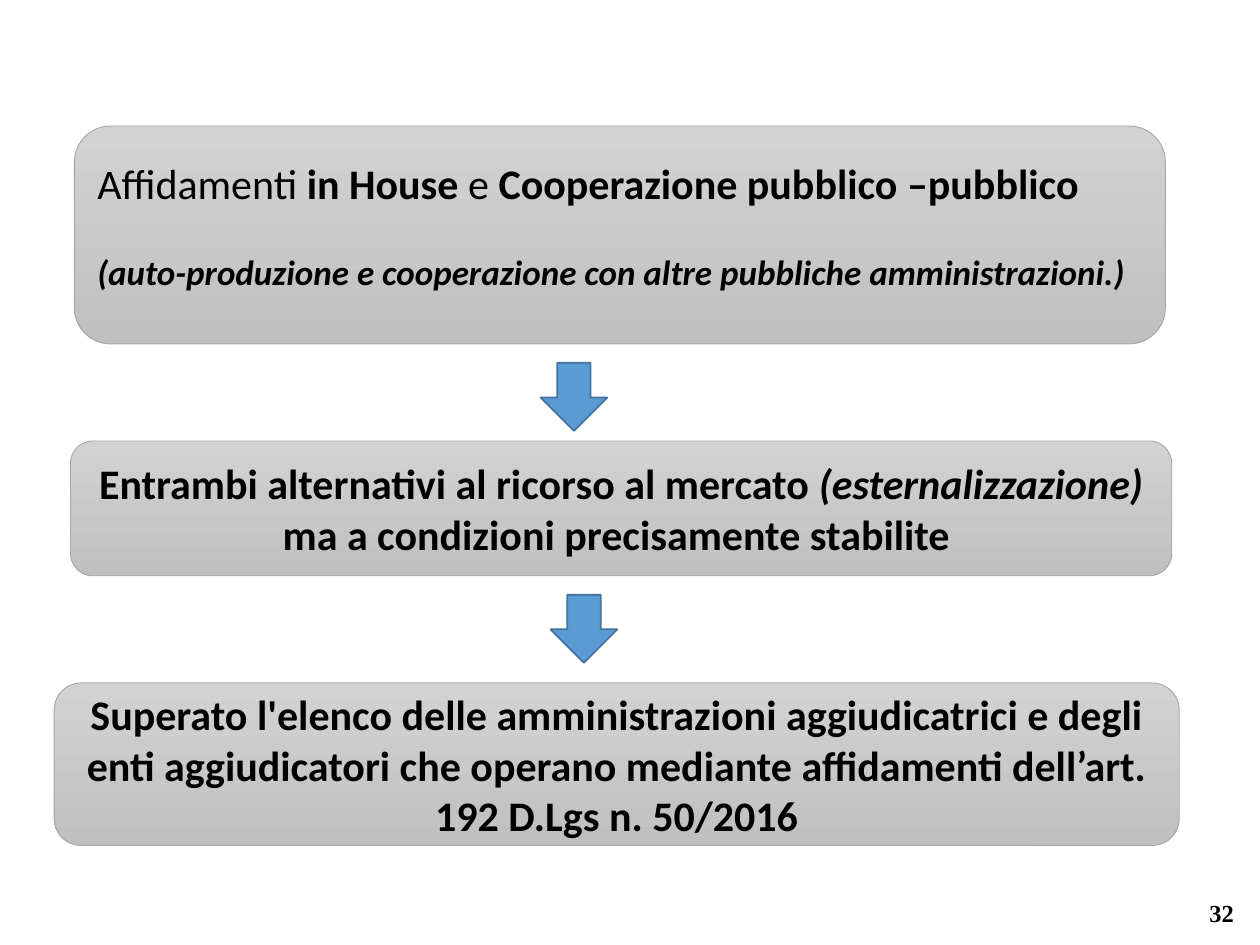
from pptx import Presentation
from pptx.dml.color import RGBColor
from pptx.enum.shapes import MSO_SHAPE
from pptx.enum.text import MSO_ANCHOR, PP_ALIGN
from pptx.util import Inches, Pt

ROUNDED, DOWN_ARROW = MSO_SHAPE.ROUNDED_RECTANGLE, MSO_SHAPE.DOWN_ARROW
MIDDLE = MSO_ANCHOR.MIDDLE
CENTER, JUSTIFY, RIGHT = PP_ALIGN.CENTER, PP_ALIGN.JUSTIFY, PP_ALIGN.RIGHT

BLACK = RGBColor(0x00, 0x00, 0x00)
GREY_TOP = RGBColor(0xD2, 0xD2, 0xD2)
GREY_BOTTOM = RGBColor(0xC0, 0xC0, 0xC0)
GREY_LINE = RGBColor(0xA5, 0xA5, 0xA5)
BLUE = RGBColor(0x5B, 0x9B, 0xD5)
BLUE_LINE = RGBColor(0x43, 0x73, 0x9E)

PLAIN = {"bold": False}
BOLD = {"bold": True}
BOLD_ITALIC = {"bold": True, "italic": True}

# Each paragraph: size, space before, runs of (text, style)
STEPS = [
    {"at": (0.59, 1, 8.66, 1.73), "align": JUSTIFY, "bottom": 0.21, "paragraphs": [
        (24, 0, [("Affidamenti ", PLAIN), ("in House ", BOLD), ("e ", PLAIN),
                 ("Cooperazione pubblico –pubblico ", BOLD)]),
        (20, 24, [("(auto-produzione e cooperazione con altre pubbliche "
                   "amministrazioni.)", BOLD_ITALIC)]),
    ]},
    {"at": (0.56, 3.5, 8.74, 1.07), "align": CENTER, "bottom": 0.05, "paragraphs": [
        (24, 0, [("Entrambi alternativi al ricorso al mercato ", BOLD),
                 ("(esternalizzazione) ", BOLD_ITALIC),
                 ("ma a condizioni precisamente stabilite ", BOLD)]),
    ]},
    {"at": (0.43, 5.42, 8.93, 1.29), "align": CENTER, "bottom": 0.05, "paragraphs": [
        (24, 0, [("Superato l'elenco delle amministrazioni aggiudicatrici e degli "
                  "enti aggiudicatori che operano mediante affidamenti dell’art. "
                  "192 D.Lgs n. 50/2016", BOLD)]),
    ]},
]
ARROWS = [(4.29, 2.88, 0.53, 0.54), (4.37, 4.72, 0.53, 0.54)]
PAGE_AT = (7.64, 7.04, 2.25, 0.4)
PAGE = [(14, 0, [("32", BOLD)])]


def add_shape(s, kind, at, line_color, line_width):
    sp = s.shapes.add_shape(kind, *map(Inches, at))
    sp.shadow.inherit = False
    sp.line.color.rgb = line_color
    sp.line.width = Pt(line_width)
    return sp


def write(tf, paragraphs, align, font="Calibri"):
    tf.word_wrap = True
    tf.vertical_anchor = MIDDLE
    for i, (size, before, runs) in enumerate(paragraphs):
        p = tf.add_paragraph() if i else tf.paragraphs[0]
        p.alignment = align
        p.space_before = Pt(before)
        for text, style in runs:
            r = p.add_run()
            r.text = text
            r.font.color.rgb = BLACK
            for name, value in {"name": font, "size": Pt(size), **style}.items():
                setattr(r.font, name, value)


def add_step(s, step):
    sp = add_shape(s, ROUNDED, step["at"], GREY_LINE, 0.5)
    sp.fill.gradient()
    sp.fill.gradient_angle = 270
    for stop, color in zip(sp.fill.gradient_stops, (GREY_TOP, GREY_BOTTOM)):
        stop.color.rgb = color
    sp.text_frame.margin_bottom = Inches(step["bottom"])
    write(sp.text_frame, step["paragraphs"], step["align"])


def add_arrow(s, at):
    sp = add_shape(s, DOWN_ARROW, at, BLUE_LINE, 1)
    sp.fill.solid()
    sp.fill.fore_color.rgb = BLUE


def main():
    prs = Presentation()
    prs.slide_width, prs.slide_height = Inches(10), Inches(7.5)
    s = prs.slides.add_slide(prs.slide_layouts[6])
    page = s.shapes.add_textbox(*map(Inches, PAGE_AT))
    write(page.text_frame, PAGE, RIGHT, "Times New Roman")
    for step in STEPS:
        add_step(s, step)
    for at in ARROWS:
        add_arrow(s, at)
    prs.save("out.pptx")


if __name__ == "__main__":
    main()
